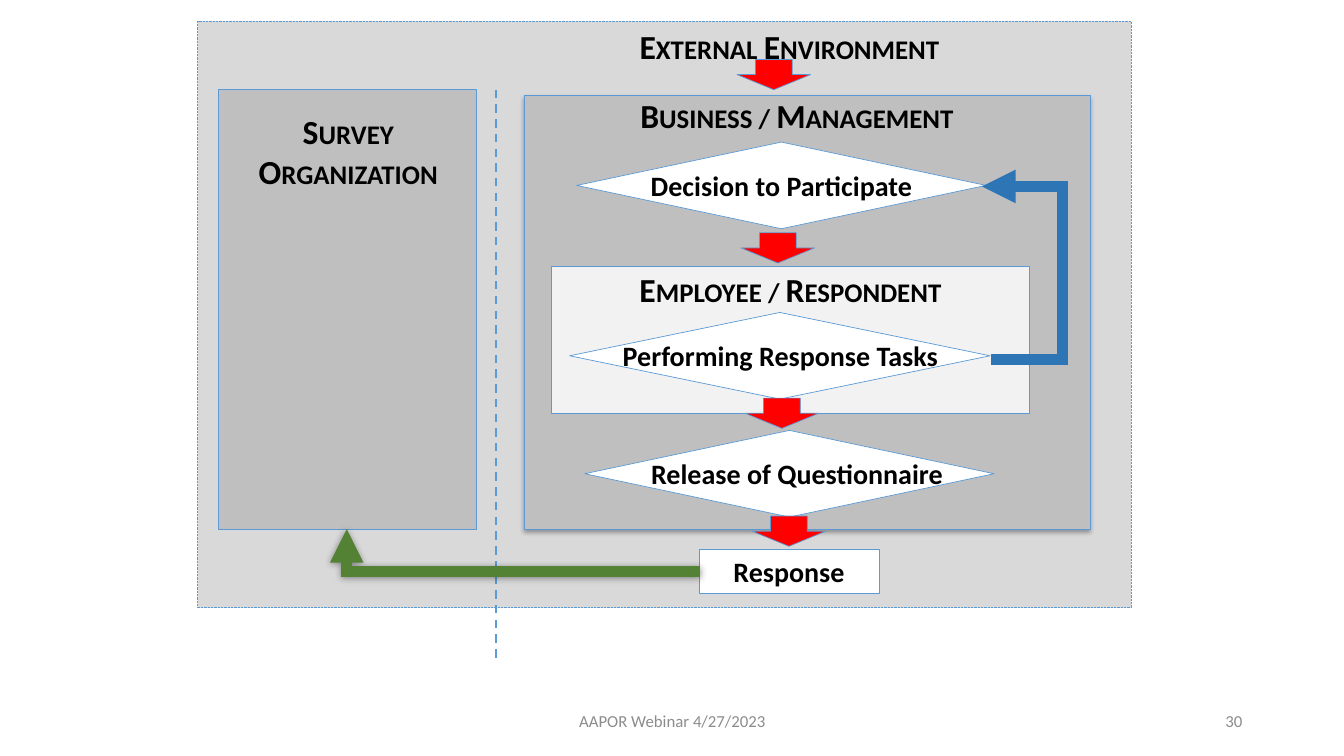
from lxml import etree
from pptx import Presentation
from pptx import util as u
from pptx.dml.color import RGBColor
from pptx.enum import dml, shapes, text
from pptx.oxml import ns

HEX = {
    "edge": "5B9BD5", "outer": "D9D9D9", "panel": "BFBFBF", "inner": "F2F2F2",
    "white": "FFFFFF", "black": "000000", "red": "FF0000", "blue": "2E75B6",
    "green": "548235", "note": "8C8C8C",
}
KIND = shapes.MSO_SHAPE
ALIGN = text.PP_ALIGN


def rgb(name):
    return RGBColor.from_string(HEX[name])


def inches(*sizes):
    return [u.Inches(size) for size in sizes]


def child(node, tag, **attrs):
    return etree.SubElement(node, ns.qn(tag), attrs)


def shade(effect, alpha, blur, dist, angle):
    outer = child(effect, "a:outerShdw", blurRad=str(u.Pt(blur)), dist=str(u.Pt(dist)),
                  dir=str(angle * 60000), algn="ctr", rotWithShape="0")
    tint = child(outer, "a:srgbClr", val=HEX["black"])
    child(tint, "a:alpha", val=str(alpha * 1000))


def block(tree, kind, box, fill):
    shape = tree.add_shape(kind, *inches(*box))
    shape.shadow.inherit = False
    shape.fill.solid()
    shape.fill.fore_color.rgb = rgb(fill)
    shape.line.color.rgb = rgb("edge")
    shape.line.width = u.Pt(0.5)
    return shape


def label(tree, words, box, size, color="black", bold=True, small=False, align=ALIGN.CENTER):
    frame = tree.add_textbox(*inches(*box)).text_frame
    frame.word_wrap = True
    para = frame.paragraphs[0]
    para.alignment = align
    run = para.add_run()
    run.text = words
    font = run.font
    font.name, font.size, font.bold = "Calibri", u.Pt(size), bold
    font.color.rgb = rgb(color)
    if small:
        run._r.get_or_add_rPr().set("cap", "small")
    return frame


def heading(tree, words, box):
    label(tree, words, box, 24, small=True)


def step(tree, kind, words, box, inset):
    left, top, width, height = box
    group = tree.add_group_shape().shapes
    block(group, kind, box, "white")
    side, drop, span = inset
    label(group, words, (left + side, top + drop, span, 0.44), 20)


def footer(tree, words, box, align):
    frame = label(tree, words, box, 12, "note", False, align=align)
    frame.vertical_anchor = text.MSO_ANCHOR.MIDDLE


def link(tree, kind, start, end, color, width):
    line = tree.add_connector(kind, *inches(*start, *end))
    line.line.color.rgb = rgb(color)
    line.line.width = u.Pt(width)
    effect = child(line._element.spPr, "a:effectLst")
    return line, effect


def elbow(tree, start, end, color, preset, bend=None):
    line, effect = link(tree, shapes.MSO_CONNECTOR.ELBOW, start, end, color, 8)
    stroke = line.line._get_or_add_ln()
    child(stroke, "a:miter", lim="800000")
    child(stroke, "a:tailEnd", type="triangle")
    shape = line._element.spPr.find(ns.qn("a:prstGeom"))
    shape.set("prst", preset)
    if bend is not None:
        guides = shape.find(ns.qn("a:avLst"))
        if guides is None:
            guides = child(shape, "a:avLst")
        child(guides, "a:gd", name="adj1", fmla=f"val {round(bend * 100000)}")
    return effect


def main():
    deck = Presentation()
    deck.slide_width, deck.slide_height = inches(13.33, 7.5)
    tree = deck.slides.add_slide(deck.slide_layouts[6]).shapes

    outer = block(tree, KIND.RECTANGLE, (1.96, 0.21, 9.26, 5.82), "outer")
    outer.line.dash_style = dml.MSO_LINE.ROUND_DOT
    border, _ = link(tree, shapes.MSO_CONNECTOR.STRAIGHT, (4.92, 0.89), (4.92, 6.56), "edge", 1.5)
    border.line.dash_style = dml.MSO_LINE.DASH
    heading(tree, "External Environment", (5.44, 0.21, 4.78, 0.51))

    block(tree, KIND.RECTANGLE, (2.17, 0.89, 2.55, 4.36), "panel")
    heading(tree, "Survey Organization", (2.19, 1.05, 2.53, 0.91))

    firm = block(tree, KIND.RECTANGLE, (5.2, 0.95, 5.61, 4.3), "panel")
    shade(firm._element.spPr.find(ns.qn("a:effectLst")), 35, 3.1, 1.8, 90)
    block(tree, KIND.RECTANGLE, (5.47, 2.64, 4.74, 1.46), "inner")
    heading(tree, "Business / Management", (5.64, 0.89, 4.53, 0.51))
    heading(tree, "Employee / Respondent", (5.47, 2.62, 4.74, 0.51))

    for kind, words, box, inset in (
        (KIND.DIAMOND, "Performing Response Tasks", (5.65, 3.1, 4.17, 0.86), (0.3, 0.21, 3.58)),
        (KIND.DIAMOND, "Decision to Participate", (5.72, 1.41, 4.06, 0.86), (0.53, 0.21, 3)),
        (KIND.RECTANGLE, "Response", (6.94, 5.45, 1.78, 0.44), (0.14, 0, 1.49)),
        (KIND.DIAMOND, "Release of Questionnaire", (5.8, 4.27, 4.06, 0.86), (0.47, 0.21, 3.27)),
    ):
        step(tree, kind, words, box, inset)

    for left, top in ((7.31, 0.59), (7.35, 2.31), (7.39, 3.95), (7.46, 5.12)):
        block(tree, KIND.DOWN_ARROW, (left, top, 0.73, 0.3), "red")

    elbow(tree, (9.83, 3.57), (9.74, 1.85), "blue", "bentConnector3", -7.83)
    glow = elbow(tree, (6.94, 5.67), (3.44, 5.25), "green", "bentConnector2")
    shade(glow, 40, 5, 0, 0)

    footer(tree, "AAPOR Webinar 4/27/2023", (4.42, 6.95, 4.5, 0.4), ALIGN.CENTER)
    footer(tree, "30", (9.42, 6.95, 3, 0.4), ALIGN.RIGHT)
    deck.save("out.pptx")


if __name__ == "__main__":
    main()
